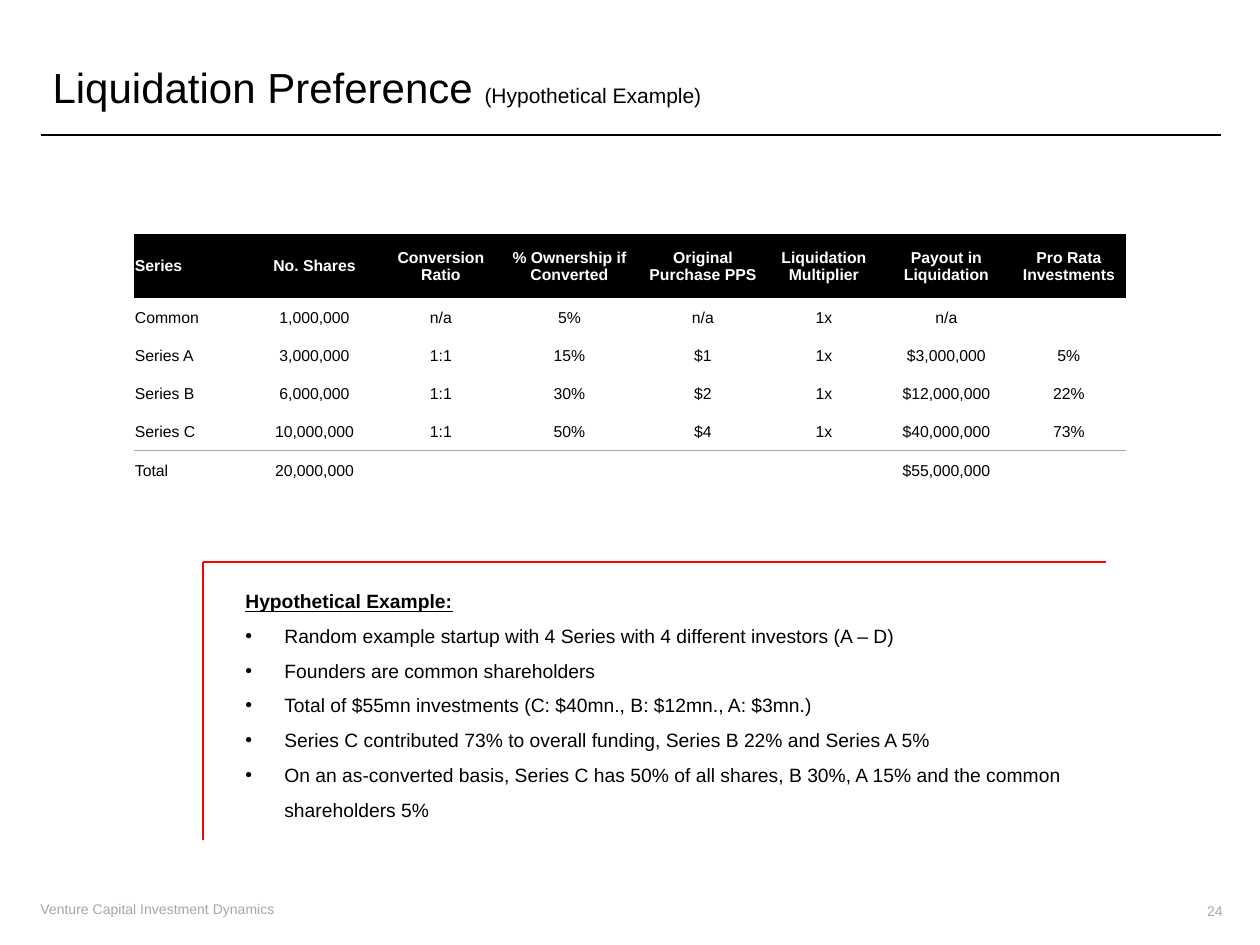
from dataclasses import dataclass

from lxml import etree
from pptx import Presentation
from pptx import util as u
from pptx.dml import color
from pptx.enum import text
from pptx.oxml import ns

SCALE = u.Inches(1) / 126


def px(n):
    return u.Emu(round(n * SCALE))


@dataclass(frozen=True)
class Theme:
    font: str = "Arial"
    ink: str = "000000"
    paper: str = "FFFFFF"
    grey: str = "A6A6A6"
    red: str = "FF0000"
    head: int = 24
    sub: int = 12
    body: int = 11
    cell: int = 9
    small: int = 8


LEFT = text.PP_ALIGN.LEFT
MID = text.PP_ALIGN.CENTER
RIGHT = text.PP_ALIGN.RIGHT
CENTRE = text.MSO_ANCHOR.MIDDLE
NO_STYLE = "{2D5ABB26-0587-4C30-8999-92F81FD0307C}"


def apply(item, values):
    for name, value in values.items():
        setattr(item, name, value)


def child(node, tag, **attrs):
    return etree.SubElement(node, ns.qn(tag), attrs)


class Deck:
    def __init__(self, theme, wide, high):
        self.theme = theme
        self.file = Presentation()
        apply(self.file, {"slide_width": px(wide), "slide_height": px(high)})
        self.slide = self.file.slides.add_slide(self.file.slide_layouts[5])

    def place(self, shape, box):
        apply(shape, dict(zip(("left", "top", "width", "height"), map(px, box))))

    def run(self, para, words, size, hue, **more):
        run = para.add_run()
        run.text = words
        apply(run.font, {"name": self.theme.font, "size": u.Pt(size), **more})
        run.font.color.rgb = color.RGBColor.from_string(hue)

    def title(self, box, parts):
        shape = self.slide.shapes.title
        self.place(shape, box)
        frame = shape.text_frame
        apply(frame, {"word_wrap": True, "vertical_anchor": CENTRE,
                      "auto_size": text.MSO_AUTO_SIZE.NONE})
        para = frame.paragraphs[0]
        para.alignment = LEFT
        for words, size in parts:
            self.run(para, words, size, self.theme.ink)

    def frame(self, box, anchor=text.MSO_ANCHOR.TOP):
        frame = self.slide.shapes.add_textbox(*map(px, box)).text_frame
        apply(frame, {"word_wrap": True, "vertical_anchor": anchor})
        return frame

    def label(self, box, words, align=LEFT, anchor=text.MSO_ANCHOR.TOP):
        para = self.frame(box, anchor).paragraphs[0]
        para.alignment = align
        self.run(para, words, self.theme.small, self.theme.grey)

    def notes(self, box, head, points, indent):
        look = self.theme
        frame = self.frame(box)
        para = frame.paragraphs[0]
        para.line_spacing = 1.5
        self.run(para, head, look.body, look.ink, bold=True, underline=True)
        for point in points:
            para = frame.add_paragraph()
            para.line_spacing = 1.5
            self.run(para, point, look.body, look.ink)
            props = para._p.get_or_add_pPr()
            props.set("marL", str(px(indent)))
            props.set("indent", str(-px(indent)))
            child(props, "a:buFont", typeface=look.font)
            child(props, "a:buChar", char="•")

    def line(self, start, end, hue, width):
        line = self.slide.shapes.add_connector(1, *map(px, (*start, *end)))
        line.line.color.rgb = color.RGBColor.from_string(hue)
        line.line.width = u.Pt(width)
        child(line._element.spPr, "a:effectLst")

    def rule(self, cell, hue, width):
        edge = etree.Element(ns.qn("a:lnB"), w=str(u.Pt(width)))
        child(child(edge, "a:solidFill"), "a:srgbClr", val=hue)
        cell._tc.get_or_add_tcPr().insert(0, edge)

    def table(self, spot, rows, widths, heights):
        look = self.theme
        box = (*spot, sum(widths), sum(heights))
        table = self.slide.shapes.add_table(
            len(rows), len(widths), *map(px, box)).table
        apply(table, {"first_row": False, "horz_banding": False})
        table._tbl.tblPr.find(ns.qn("a:tableStyleId")).text = NO_STYLE
        for col, width in zip(table.columns, widths):
            col.width = px(width)
        for row, height in zip(table.rows, heights):
            row.height = px(height)
        for r, row in enumerate(rows):
            for c, words in enumerate(row):
                cell = table.cell(r, c)
                apply(cell, {"vertical_anchor": CENTRE, "margin_left": px(1),
                             "margin_right": px(1), "margin_top": px(1),
                             "margin_bottom": 0})
                if r == 0:
                    cell.fill.solid()
                    cell.fill.fore_color.rgb = color.RGBColor.from_string(look.ink)
                else:
                    cell.fill.background()
                if r == len(rows) - 2:
                    self.rule(cell, look.grey, 0.5)
                if words:
                    para = cell.text_frame.paragraphs[0]
                    para.alignment = MID if c else LEFT
                    hue = look.ink if r else look.paper
                    self.run(para, words, look.cell, hue, bold=r == 0)


ROWS = [
    ("Series", "No. Shares", "Conversion Ratio", "% Ownership if Converted",
     "Original Purchase PPS", "Liquidation Multiplier",
     "Payout in Liquidation", "Pro Rata Investments"),
    ("Common", "1,000,000", "n/a", "5%", "n/a", "1x", "n/a", ""),
    ("Series A", "3,000,000", "1:1", "15%", "$1", "1x", "$3,000,000", "5%"),
    ("Series B", "6,000,000", "1:1", "30%", "$2", "1x", "$12,000,000", "22%"),
    ("Series C", "10,000,000", "1:1", "50%", "$4", "1x", "$40,000,000", "73%"),
    ("Total", "20,000,000", "", "", "", "", "$55,000,000", ""),
]
POINTS = [
    "Random example startup with 4 Series with 4 different investors (A – D)",
    "Founders are common shareholders",
    "Total of $55mn investments (C: $40mn., B: $12mn., A: $3mn.)",
    "Series C contributed 73% to overall funding, Series B 22% and Series A 5%",
    "On an as-converted basis, Series C has 50% of all shares, B 30%, A 15% "
    "and the common shareholders 5%",
]


def main():
    look = Theme()
    deck = Deck(look, 1260, 945)
    deck.line((41, 135), (1221, 135), look.ink, 0.75)
    deck.label((28, 894, 348, 30), "Venture Capital Investment Dynamics")
    deck.title((40, 43, 956, 88), [("Liquidation Preference ", look.head),
                                   ("(Hypothetical Example)", look.sub)])
    deck.label((1188, 886, 47, 50), "24", RIGHT, CENTRE)
    deck.notes((233, 572, 867, 253), "Hypothetical Example:", POINTS, 39)
    deck.table((134, 234), ROWS, (113, 135, 118, 139, 128, 114, 131, 114),
               [64] + [38] * 5)
    for end in ((203, 840), (1106, 562)):
        deck.line((203, 562), end, look.red, 1)
    deck.file.save("out.pptx")


if __name__ == "__main__":
    main()
